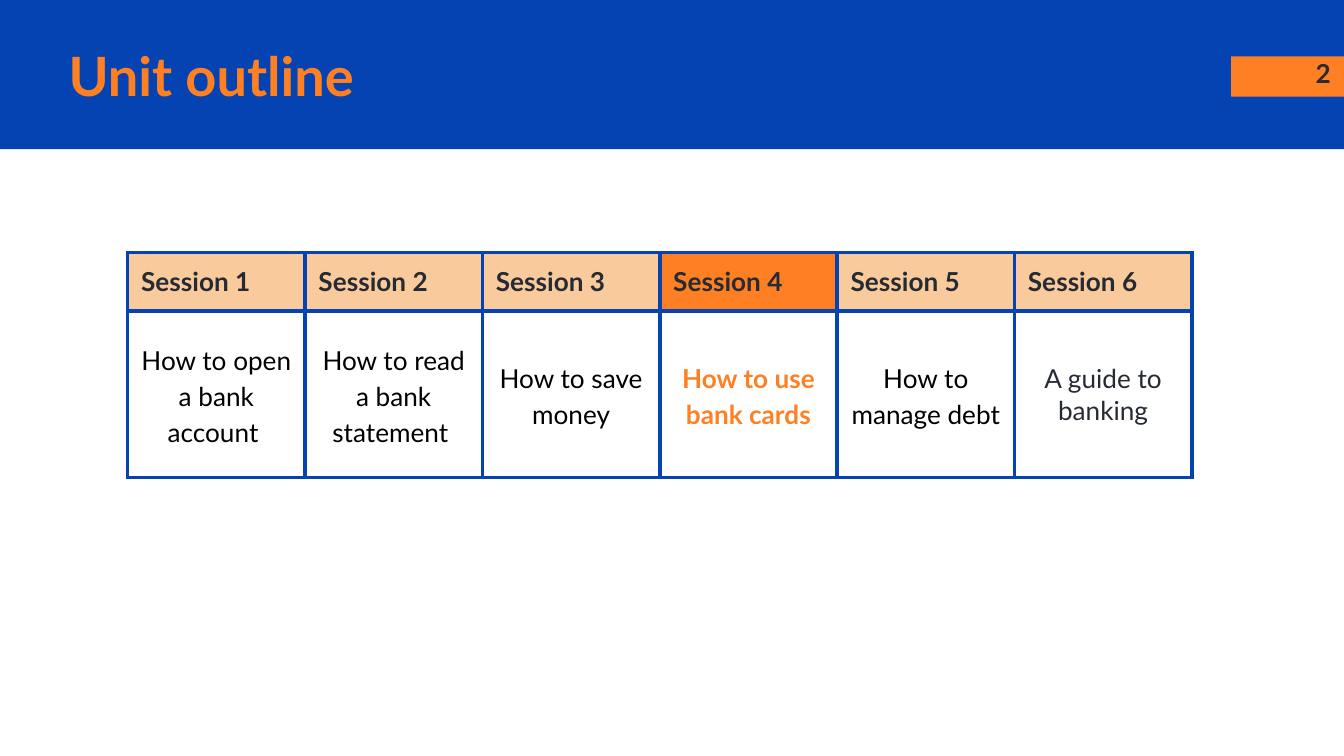
from dataclasses import dataclass

from lxml.etree import SubElement
from pptx import Presentation
from pptx.dml.color import RGBColor
from pptx.enum.shapes import MSO_SHAPE as Shape
from pptx.enum.text import MSO_ANCHOR as Anchor, PP_ALIGN as Align
from pptx.oxml.ns import qn
from pptx.slide import Slide
from pptx.table import _Cell as Cell
from pptx.text.text import TextFrame
from pptx.util import Inches, Pt

BLUE = RGBColor(0x05, 0x43, 0xB3)
ORANGE = RGBColor(0xFF, 0x80, 0x22)
PEACH = RGBColor(0xF9, 0xCB, 0x9C)
INK = RGBColor(0x26, 0x2A, 0x33)
BLACK = RGBColor(0x00, 0x00, 0x00)
WHITE = RGBColor(0xFF, 0xFF, 0xFF)
FONT = "Lato"
BORDER = Pt(2.25)


@dataclass(frozen=True)
class Session:
    topic: str
    color: RGBColor = BLACK
    current: bool = False
    spacing: float = 1.15
    inset: float = 0.07


SESSIONS = [
    Session("How to open a bank account "),
    Session("How to read a bank statement "),
    Session("How to save money"),
    Session("How to use bank cards", ORANGE, current=True),
    Session("How to manage debt"),
    Session("A guide to banking", INK, spacing=1.0, inset=0.1),
]


def write(frame: TextFrame, text: str, size: float, color: RGBColor,
          bold: bool, align: Align = Align.LEFT, spacing: float = 1.0) -> None:
    frame.text = text
    para = frame.paragraphs[0]
    para.alignment = align
    para.line_spacing = spacing
    para.space_before = Pt(0)
    for span in para.runs:
        span.font.name = FONT
        span.font.size = Pt(size)
        span.font.bold = bold
        span.font.color.rgb = color


def set_insets(target: TextFrame | Cell, inset: float) -> None:
    target.margin_left = target.margin_right = Inches(inset)
    target.margin_top = target.margin_bottom = Inches(inset)


def add_block(page: Slide, left: float, top: float, width: float,
              height: float, color: RGBColor) -> None:
    block = page.shapes.add_shape(Shape.RECTANGLE, Inches(left), Inches(top),
                                  Inches(width), Inches(height))
    block.shadow.inherit = False
    block.fill.solid()
    block.fill.fore_color.rgb = color
    block.line.fill.background()


def add_page_number(page: Slide, number: str) -> None:
    box = page.shapes.add_textbox(Inches(9.4), Inches(0.33), Inches(0.6), Inches(0.43))
    box.text_frame.word_wrap = True
    set_insets(box.text_frame, 0.1)
    write(box.text_frame, number, 14, INK, True, Align.RIGHT)


def set_title(page: Slide, text: str) -> None:
    title = page.shapes.title
    title.left, title.top = Inches(0.41), Inches(0.28)
    title.width, title.height = Inches(8.46), Inches(0.56)
    title.text_frame.vertical_anchor = Anchor.MIDDLE
    set_insets(title.text_frame, 0.1)
    write(title.text_frame, text, 29, ORANGE, True)
    title._element.getparent().append(title._element)


def set_borders(cell: Cell) -> None:
    properties = cell._tc.get_or_add_tcPr()
    for side in ("a:lnL", "a:lnR", "a:lnT", "a:lnB"):
        line = SubElement(properties, qn(side), w=str(BORDER))
        fill = SubElement(line, qn("a:solidFill"))
        SubElement(fill, qn("a:srgbClr"), val=str(BLUE))


def style_cell(cell: Cell, fill: RGBColor, inset: float, anchor: Anchor) -> None:
    set_borders(cell)
    cell.fill.solid()
    cell.fill.fore_color.rgb = fill
    cell.vertical_anchor = anchor
    set_insets(cell, inset)


def add_outline(page: Slide, sessions: list[Session]) -> None:
    column_width, header_height, topic_height = 1.32, 0.39, 1.24
    table = page.shapes.add_table(
        2, len(sessions), Inches(0.95), Inches(1.88),
        Inches(column_width * len(sessions)), Inches(header_height + topic_height),
    ).table
    table.horz_banding = False
    table.rows[0].height = Inches(header_height)
    table.rows[1].height = Inches(topic_height)
    for index, session in enumerate(sessions):
        table.columns[index].width = Inches(column_width)
        header, topic = table.cell(0, index), table.cell(1, index)
        style_cell(header, ORANGE if session.current else PEACH, 0.1, Anchor.TOP)
        write(header.text_frame, f"Session {index + 1}", 14, INK, True)
        style_cell(topic, WHITE, session.inset, Anchor.MIDDLE)
        write(topic.text_frame, session.topic, 14, session.color,
              session.current, Align.CENTER, session.spacing)


def main() -> None:
    deck = Presentation()
    deck.slide_width = Inches(10)
    deck.slide_height = deck.slide_width * 9 // 16
    page = deck.slides.add_slide(deck.slide_layouts.get_by_name("Title Only"))
    page.background.fill.solid()
    page.background.fill.fore_color.rgb = WHITE
    add_block(page, 0, 0, 10, 1.11, BLUE)
    add_block(page, 9.16, 0.42, 0.84, 0.3, ORANGE)
    add_page_number(page, "2")
    set_title(page, "Unit outline")
    add_outline(page, SESSIONS)
    deck.save("out.pptx")


if __name__ == "__main__":
    main()
